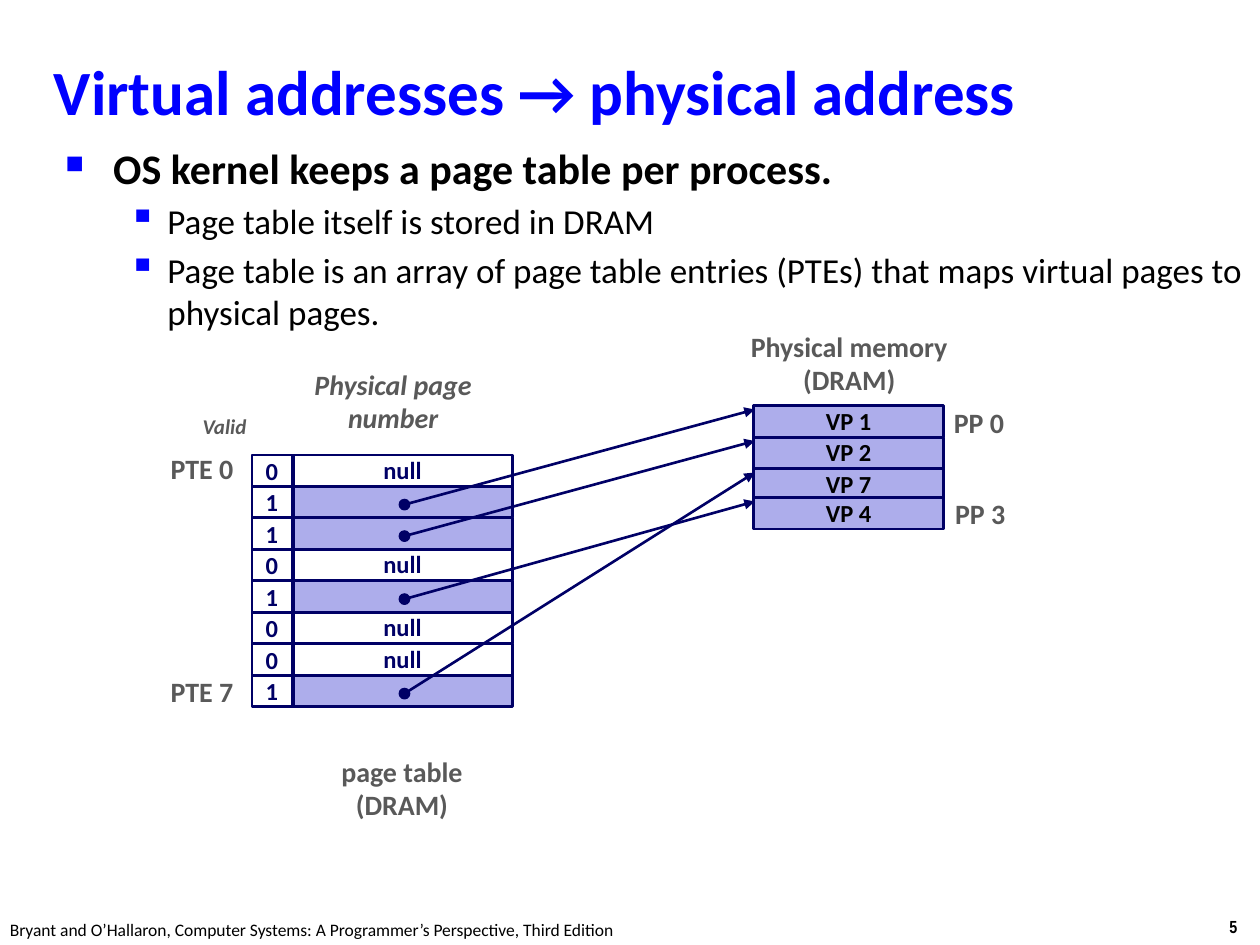
from dataclasses import dataclass

from lxml.etree import SubElement
from pptx import Presentation
from pptx.dml.color import RGBColor as RGB
from pptx.enum.shapes import MSO_CONNECTOR as CONN, MSO_SHAPE as SHAPE
from pptx.enum.text import MSO_ANCHOR as ANCHOR, PP_ALIGN as ALIGN
from pptx.oxml.ns import qn
from pptx.util import Inches, Pt


@dataclass(frozen=True)
class Theme:
    """Colours, fonts and type sizes of the slide."""
    blue: str = "0000FF"
    navy: str = "000066"
    lilac: str = "ADADEB"
    white: str = "FFFFFF"
    black: str = "000000"
    grey: str = "595959"
    font: str = "Calibri"
    narrow: str = "Arial Narrow"
    title: int = 36
    point: int = 24
    subpoint: int = 20
    label: int = 16
    cell: int = 14
    small: int = 12
    footer: int = 10
    line: float = 1.5


T = Theme()
COLS, ROWS = 40, 30
TABLE_TOP, VALID_LEFT, VALID_W, PPN_LEFT, PPN_W = 14.44, 8, 1.32, 9.28, 7
MEM_LEFT, MEM_TOP, MEM_W = 23.92, 12.88, 6.04
ENTRIES = [None, 0, 1, None, 3, None, None, 2]
FRAMES = [("VP 1", 0), ("VP 2", 1), ("VP 7", 2), ("VP 4", 2.92)]
BULLETS = [
    (0, "OS kernel keeps a page table per process."),
    (1, "Page table itself is stored in DRAM"),
    (1, "Page table is an array of page table entries (PTEs) that maps "
        "virtual pages to physical pages."),
]


def grid(*cells):
    """Turn grid units into slide lengths."""
    return [Inches(10 / COLS * n) for n in cells]


def add_run(p, text, size, color, bold=True, italic=False, font=T.font):
    """Add one formatted run to a paragraph."""
    r = p.add_run()
    r.text = text
    f = r.font
    f.name, f.size, f.bold, f.italic = font, Pt(size), bold, italic
    f.color.rgb = RGB.from_string(color)


def add_text(s, box, lines, size=T.label, color=T.grey, align=ALIGN.LEFT,
             anchor=ANCHOR.TOP, wrap=False, **style):
    """Add a text box with one paragraph per line."""
    tf = s.shapes.add_textbox(*grid(*box)).text_frame
    tf.word_wrap, tf.vertical_anchor = wrap, anchor
    for i, line in enumerate(lines):
        p = tf.paragraphs[0] if i == 0 else tf.add_paragraph()
        p.alignment, p.line_spacing = align, 0.98
        add_run(p, line, size, color, **style)


def add_bullets(s, box, items):
    """Add the two-level bullet list."""
    tf = s.shapes.add_textbox(*grid(*box)).text_frame
    tf.word_wrap = True
    levels = [(T.point, 0.38, 0.38, "■", 60), (T.subpoint, 0.81, 0.31, "▪", 110)]
    for i, (level, text) in enumerate(items):
        size, margin, hang, char, percent = levels[level]
        p = tf.paragraphs[0] if i == 0 else tf.add_paragraph()
        p.level = level
        add_run(p, text, size, T.black, bold=level == 0)
        pPr = p._p.get_or_add_pPr()
        pPr.set("marL", str(Inches(margin)))
        pPr.set("indent", str(-Inches(hang)))
        before = SubElement(pPr, qn("a:spcBef"))
        SubElement(before, qn("a:spcPct"), val="20000")
        color = SubElement(pPr, qn("a:buClr"))
        SubElement(color, qn("a:srgbClr"), val=T.blue)
        SubElement(pPr, qn("a:buSzPct"), val=str(percent * 1000))
        SubElement(pPr, qn("a:buChar"), char=char)


def add_block(s, box, fill=None, text="", color=T.navy, kind=SHAPE.RECTANGLE,
              weight=T.line):
    """Add an outlined shape with an optional fill and centred text."""
    sp = s.shapes.add_shape(kind, *grid(*box))
    sp.shadow.inherit = False
    sp.line.color.rgb, sp.line.width = RGB.from_string(T.navy), Pt(weight)
    if fill:
        sp.fill.solid()
        sp.fill.fore_color.rgb = RGB.from_string(fill)
    else:
        sp.fill.background()
    if text:
        tf = sp.text_frame
        tf.word_wrap, tf.vertical_anchor = False, ANCHOR.MIDDLE
        p = tf.paragraphs[0]
        p.alignment, p.line_spacing = ALIGN.CENTER, 0.98
        add_run(p, text, T.cell, color)


def add_arrow(s, x1, y1, x2, y2):
    """Add a straight arrow between two grid points."""
    c = s.shapes.add_connector(CONN.STRAIGHT, *grid(x1, y1, x2, y2))
    c.line.color.rgb, c.line.width = RGB.from_string(T.navy), Pt(T.line)
    SubElement(c.line._get_or_add_ln(), qn("a:tailEnd"), type="triangle")
    SubElement(c._element.spPr, qn("a:effectLst"))


def add_page_table(s):
    """Draw the valid bits and the page numbers of all entries."""
    for row, frame in enumerate(ENTRIES):
        y, cached = TABLE_TOP + row, frame is not None
        add_block(s, (PPN_LEFT, y, PPN_W, 1), T.lilac if cached else T.white,
                  "" if cached else "null")
        add_block(s, (VALID_LEFT, y, VALID_W, 1))
        add_text(s, (VALID_LEFT + 0.04, y - 0.12, 1.24, 1.32),
                 [str(int(cached))], T.cell, T.navy)


def add_memory(s):
    """Draw the physical pages."""
    for name, offset in FRAMES:
        add_block(s, (MEM_LEFT, MEM_TOP + offset, MEM_W, 1), T.lilac, name,
                  T.black)


def add_pointers(s):
    """Link each valid entry to its physical page."""
    x, d = PPN_LEFT + PPN_W / 2 + 0.06, 0.32
    for row, frame in enumerate(ENTRIES):
        if frame is not None:
            y = TABLE_TOP + row + 0.58
            add_block(s, (x - d / 2, y - d / 2, d, d), T.navy,
                      kind=SHAPE.OVAL, weight=1)
            add_arrow(s, x, y, MEM_LEFT + 0.04,
                      MEM_TOP + FRAMES[frame][1] + 0.12)


def add_labels(s):
    """Name the parts of the diagram."""
    mid, center, right = ANCHOR.MIDDLE, ALIGN.CENTER, ALIGN.RIGHT
    add_text(s, (10.4, 23.8, 4.72, 2.52), ["page table", "(DRAM)"], align=center)
    add_text(s, (23.4, 10.32, 7.12, 2.52), ["Physical memory", "(DRAM)"],
             align=center)
    add_text(s, (9.44, 11.52, 6.08, 2.52), ["Physical page", "number"],
             align=center, anchor=mid, italic=True)
    add_text(s, (6.04, 12.96, 3, 1.2), ["Valid"], T.small, wrap=True, italic=True)
    for text, x, y, w, align in [
            ("PTE 0", 5, 14.16, 2.8, right), ("PTE 7", 5, 21.24, 2.8, right),
            ("PP 0", 29.88, 12.72, 2.4, center), ("PP 3", 29.92, 15.6, 2.4, center)]:
        add_text(s, (x, y, w, 1.48), [text], align=align, anchor=mid)


def main():
    """Build and save the slide."""
    prs = Presentation()
    prs.slide_width, prs.slide_height = grid(COLS, ROWS)
    s = prs.slides.add_slide(prs.slide_layouts[6])
    add_text(s, (38.64, 28.92, 1.36, 1.08), ["5"], T.footer, T.black, font=T.narrow)
    add_text(s, (-0.08, 29, 20.32, 1.08),
             ["Bryant and O’Hallaron, Computer Systems: "
              "A Programmer’s Perspective, Third Edition"],
             T.footer, T.black, bold=False)
    add_text(s, (1.32, 1.24, 36.24, 3.44), ["Virtual addresses → physical address"],
             T.title, T.blue, anchor=ANCHOR.MIDDLE, wrap=True)
    add_bullets(s, (1.68, 4.32, 39, 5.64), BULLETS)
    add_page_table(s)
    add_memory(s)
    add_pointers(s)
    add_labels(s)
    prs.save("out.pptx")


if __name__ == "__main__":
    main()
